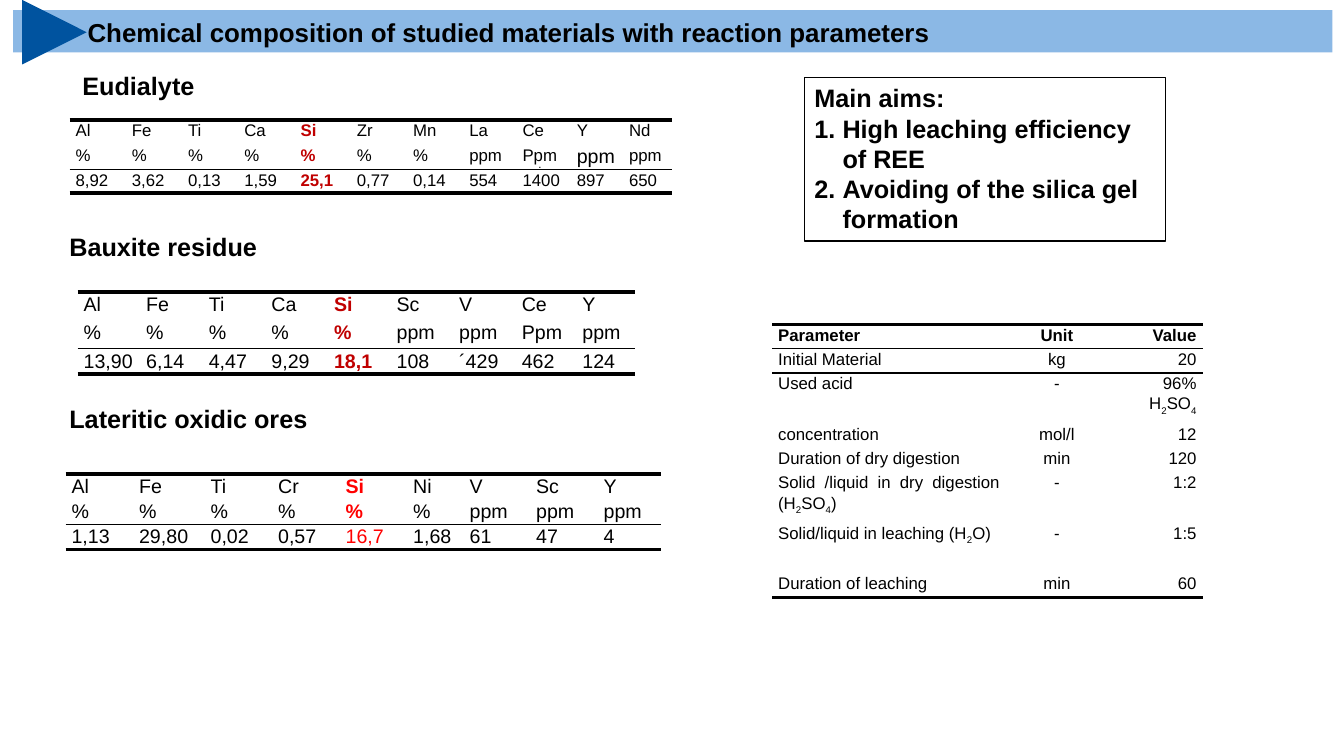
from dataclasses import dataclass

from lxml.etree import SubElement
from pptx import Presentation
from pptx.dml.color import RGBColor
from pptx.enum.shapes import MSO_SHAPE as Shape
from pptx.enum.text import MSO_ANCHOR as Anchor, PP_ALIGN as Align
from pptx.oxml.ns import qn
from pptx.util import Emu, Inches, Pt

COLUMNS, ROWS = 80, 45
SLIDE_WIDTH, SLIDE_HEIGHT = Inches(13.33), Inches(7.5)


@dataclass(frozen=True)
class Theme:
    """Colours, font, type sizes and line widths of the slide."""
    font: str = "Arial"
    ink: str = "000000"
    paper: str = "FFFFFF"
    band: str = "8BB8E5"
    marker: str = "00539F"
    dark_red: str = "C00000"
    bright_red: str = "FF0000"
    title: float = 18.5
    heading: float = 18
    large: float = 14
    small: float = 12
    dot: float = 8.2
    thick: float = 3
    thin: float = 1


THEME = Theme()


@dataclass(frozen=True)
class Box:
    """A rectangle measured in grid columns and rows."""
    left: float
    top: float
    width: float
    height: float

    def inner(self, left, top, width=None, height=None):
        """Return a box offset from this one, by default reaching its far edges."""
        return Box(self.left + left, self.top + top,
                   self.width - left if width is None else width,
                   self.height - top if height is None else height)

    def emu(self):
        """Return left, top, width and height as slide lengths."""
        across, down = SLIDE_WIDTH / COLUMNS, SLIDE_HEIGHT / ROWS
        return [Emu(round(length)) for length in (
            self.left * across, self.top * down, self.width * across, self.height * down)]


def write(para, text, size=THEME.small, color=THEME.ink, bold=False, align=None, spacing=None):
    """Write text into a paragraph; an underscore lowers the next character."""
    para.alignment, para.line_spacing = align, spacing
    first, *lowered = text.split("_")
    pieces = [(first, False)]
    for piece in lowered:
        pieces += [(piece[0], True), (piece[1:], False)]
    for piece, is_subscript in pieces:
        if not piece:
            continue
        span = para.add_run()
        span.text = piece
        span.font.name, span.font.size, span.font.bold = THEME.font, Pt(size), bold
        span.font.color.rgb = RGBColor.from_string(color)
        if is_subscript:
            span.font._element.set("baseline", "-25000")


def add_label(page, box, text, anchor=Anchor.TOP, wrap=False, **style):
    """Add a one-paragraph text box and return its frame."""
    frame = page.shapes.add_textbox(*box.emu()).text_frame
    frame.word_wrap, frame.vertical_anchor = wrap, anchor
    write(frame.paragraphs[0], text, **style)
    return frame


def paint(shape, fill, line=None):
    """Give a shape a flat fill and an optional thin line."""
    shape.shadow.inherit = False
    shape.fill.solid()
    shape.fill.fore_color.rgb = RGBColor.from_string(fill)
    if line:
        shape.line.color.rgb = RGBColor.from_string(line)
        shape.line.width = Pt(THEME.thin)
    else:
        shape.line.fill.background()


def draw_border(cell, side, points):
    """Draw one border of a table cell."""
    line = SubElement(cell._tc.get_or_add_tcPr(), qn(f"a:{side}"), w=str(Pt(points)))
    SubElement(SubElement(line, qn("a:solidFill")), qn("a:srgbClr"), val=THEME.ink)


def add_ruled_table(page, box, rows, widths, heights, header_rows, style_of):
    """Add a table ruled above, below and under its header rows."""
    table = page.shapes.add_table(len(rows), len(widths), *box.emu()).table
    table.first_row = table.horz_banding = False
    table._tbl.tblPr[0].text = "{2D5ABB26-0587-4C30-8999-92F81FD0307C}"
    _, _, full_width, full_height = box.emu()
    for column, share in zip(table.columns, widths):
        column.width = Emu(round(full_width * share / sum(widths)))
    for row, share in zip(table.rows, heights):
        row.height = Emu(round(full_height * share / sum(heights)))
    tops = {0: THEME.thick, header_rows: THEME.thin}
    bottoms = {header_rows - 1: THEME.thin, len(rows) - 1: THEME.thick}
    for y, texts in enumerate(rows):
        for x, text in enumerate(texts):
            cell = table.cell(y, x)
            cell.margin_left = cell.margin_right = Inches(0.06)
            cell.margin_top = cell.margin_bottom = 0
            for side, rules in (("lnT", tops), ("lnB", bottoms)):
                if y in rules:
                    draw_border(cell, side, rules[y])
            cell.fill.background()
            write(cell.text_frame.paragraphs[0], text, spacing=1.07, **style_of(y, x))


def add_banner(page, box, title):
    """Add the title band with its triangular marker."""
    paint(page.shapes.add_shape(Shape.RECTANGLE, *box.inner(0, 0.6, height=2.52).emu()), THEME.band)
    left, top, width, height = box.inner(0.54, 0, 3.84, 3.84).emu()
    outline = page.shapes.build_freeform(left, top)
    outline.add_line_segments([(left, top + height), (left + width, top + height // 2)])
    paint(outline.convert_to_shape(), THEME.marker)
    add_label(page, box.inner(3.84, 0.72, 58.08, 2.4), title, anchor=Anchor.BOTTOM, wrap=True,
              size=THEME.title, bold=True)


def add_composition(page, box, heading, rows, widths, heights, table_at, heading_at=0,
                    heading_width=13, size=THEME.large, accent=THEME.dark_red,
                    bold_rows=3, larger=()):
    """Add a heading and a table of elements with silicon picked out."""
    add_label(page, box.inner(heading_at, 0, heading_width, 2.4), heading,
              size=THEME.heading, bold=True)
    rows = [row.split() for row in rows]
    silicon = rows[0].index("Si")

    def style_of(y, x):
        """Return the format of one cell."""
        return dict(size=THEME.large if (y, x) in larger else size, align=Align.JUSTIFY,
                    color=accent if x == silicon else THEME.ink,
                    bold=x == silicon and y < bold_rows)

    add_ruled_table(page, box.inner(*table_at), rows, widths, heights, 2, style_of)


def add_parameters(page, box, rows):
    """Add the table of reaction parameters."""
    aligns = Align.JUSTIFY, Align.CENTER, Align.RIGHT
    heights = [0.5 if index in (2, 5, 6) else 0.24 for index in range(len(rows))]
    add_ruled_table(page, box, rows, (2.32, 1.01, 0.94), heights, 1,
                    lambda y, x: dict(align=aligns[x], bold=y == 0))


def add_aims(page, box, heading, aims):
    """Add the framed, numbered list of aims."""
    frame_shape = page.shapes.add_shape(Shape.RECTANGLE, *box.emu())
    paint(frame_shape, THEME.paper, THEME.ink)
    frame = frame_shape.text_frame
    frame.word_wrap, frame.vertical_anchor = True, Anchor.TOP
    style = dict(size=THEME.heading, bold=True, align=Align.LEFT)
    write(frame.paragraphs[0], heading, **style)
    for aim in aims:
        para = frame.add_paragraph()
        properties = para._p.get_or_add_pPr()
        properties.set("marL", str(Inches(0.28)))
        properties.set("indent", str(-Inches(0.28)))
        SubElement(properties, qn("a:buAutoNum"), type="arabicPeriod")
        write(para, aim, **style)


def main():
    """Build the slide and save the deck."""
    deck = Presentation()
    deck.slide_width, deck.slide_height = SLIDE_WIDTH, SLIDE_HEIGHT
    page = deck.slides.add_slide(deck.slide_layouts[6])
    add_banner(page, Box(0.78, 0, 78.54, 3.84),
               "Chemical composition of studied materials with reaction parameters")
    add_composition(
        page, Box(4.14, 3.9, 35.88, 7.5), "Eudialyte",
        ("Al Fe Ti Ca Si Zr Mn La Ce Y Nd", "% % % % % % % ppm Ppm ppm ppm",
         "8,92 3,62 0,13 1,59 25,1 0,77 0,14 554 1400 897 650"),
        [0.56] * 7 + [0.53, 0.54, 0.52, 0.49], (0.24, 0.23, 0.23), (0, 3.24),
        heading_at=0.18, heading_width=8.34, size=THEME.small, larger={(1, 9)})
    dot = add_label(page, Box(31.62, 9.12, 1.08, 1.26), ".", anchor=Anchor.MIDDLE,
                    size=THEME.dot, align=Align.JUSTIFY)
    dot.margin_left = dot.margin_right = Inches(0.07)
    dot.margin_top = dot.margin_bottom = Inches(0.04)
    add_composition(
        page, Box(3.54, 13.5, 34.26, 8.7), "Bauxite residue",
        ("Al Fe Ti Ca Si Sc V Ce Y", "% % % % % ppm ppm Ppm ppm",
         "13,90 6,14 4,47 9,29 18,1 108 ´429 462 124"),
        [0.62] * 7 + [0.6, 0.58], (0.28, 0.28, 0.24), (1.08, 3.9))
    add_composition(
        page, Box(3.54, 23.7, 35.82, 8.76), "Lateritic oxidic ores",
        ("Al Fe Ti Cr Si Ni V Sc Y", "% % % % % % ppm ppm ppm",
         "1,13 29,80 0,02 0,57 16,7 1,68 61 47 4"),
        (0.67, 0.71, 0.67, 0.67, 0.67, 0.56, 0.66, 0.67, 0.63), (1, 1, 1), (0.36, 4.5),
        heading_width=15.54, accent=THEME.bright_red, bold_rows=2)
    add_parameters(page, Box(45.96, 19.32, 25.62, 16.26), (
        ("Parameter", "Unit", "Value"),
        ("Initial Material", "kg", "20"),
        ("Used acid", "-", "96% H_2SO_4"),
        ("concentration", "mol/l", "12"),
        ("Duration of dry digestion", "min", "120"),
        ("Solid /liquid in dry digestion (H_2SO_4)", "-", "1:2"),
        ("Solid/liquid in leaching (H_2O)", "-", "1:5"),
        ("Duration of leaching", "min", "60")))
    add_aims(page, Box(47.88, 4.62, 21.48, 9.72), "Main aims:",
             ("High leaching efficiency of REE", "Avoiding of the silica gel formation"))
    deck.save("out.pptx")


if __name__ == "__main__":
    main()
